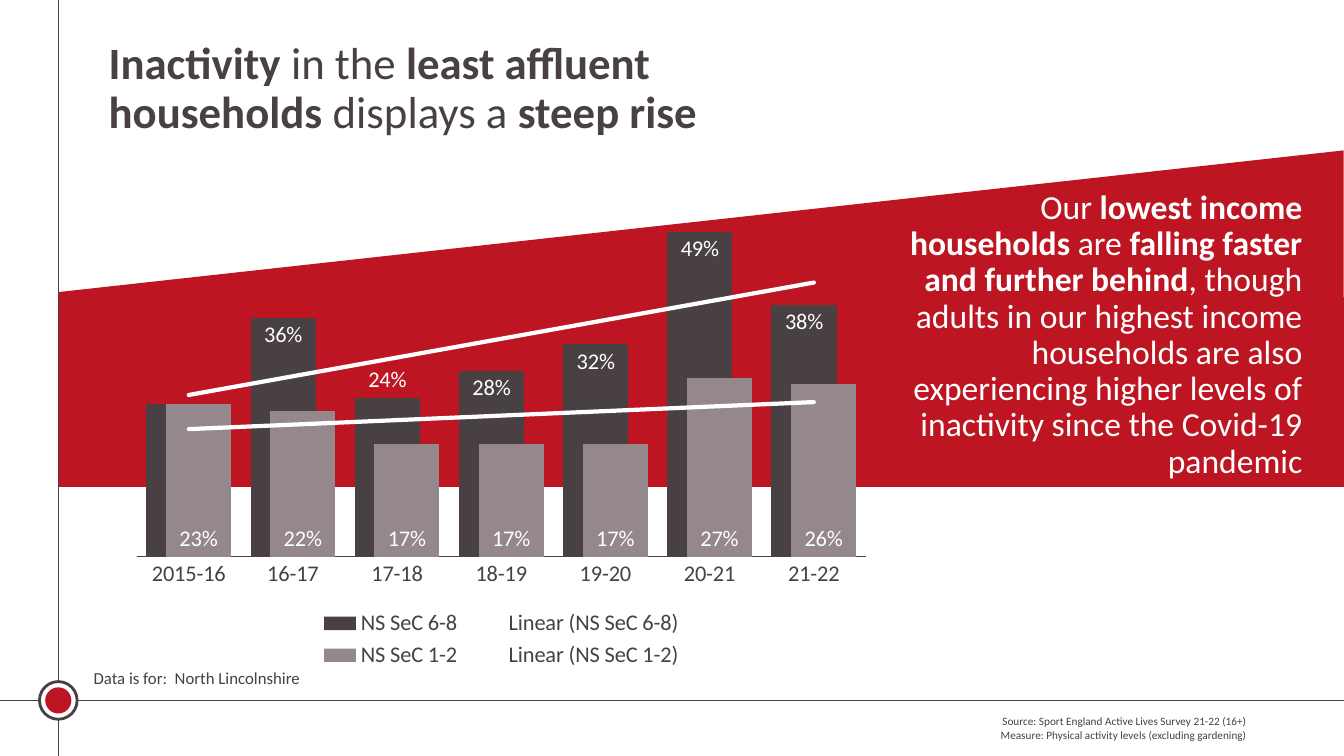
from dataclasses import dataclass

from lxml import etree
from pptx import Presentation
from pptx import util as u
from pptx.chart.data import CategoryChartData
from pptx.dml.color import RGBColor
from pptx.enum import chart as ch, shapes, text
from pptx.oxml.ns import qn


@dataclass(frozen=True)
class Theme:
    font: str = "Calibri"
    dark: str = "484043"
    red: str = "BD1622"
    grey: str = "95888D"
    white: str = "FFFFFF"
    title: int = 32
    message: int = 24
    chart: int = 16
    note: int = 12
    source: int = 8


@dataclass(frozen=True)
class Box:
    x: float
    y: float
    w: float
    h: float

    def cm(self) -> tuple:
        return tuple(u.Cm(v) for v in (self.x, self.y, self.w, self.h))


@dataclass(frozen=True)
class Group:
    name: str
    values: tuple
    color: str
    label_pos: ch.XL_LABEL_POSITION


T = Theme()
W, H = 33.87, 19.05
AXIS_X, AXIS_Y = 1.47, 17.65  # crossing of the two frame lines
YEARS = ("2015-16", "16-17", "17-18", "18-19", "19-20", "20-21", "21-22")
GROUPS = (
    Group("NS SeC 6-8", (0.23, 0.36, 0.24, 0.28, 0.32, 0.49, 0.38), T.dark,
          ch.XL_LABEL_POSITION.INSIDE_END),
    Group("NS SeC 1-2", (0.23, 0.22, 0.17, 0.17, 0.17, 0.27, 0.26), T.grey,
          ch.XL_LABEL_POSITION.INSIDE_BASE),
)


def rgb(color: str) -> RGBColor:
    return RGBColor.from_string(color)


def set_font(font, size: float, color: str) -> None:
    font.name, font.size = T.font, u.Pt(size)
    font.color.rgb = rgb(color)


def add_text(s, box: Box, content: str, *, size: float, color: str = T.dark,
             right: bool = False, spacing: float = 1.0) -> None:
    """Write one paragraph per line; parts between asterisks are bold."""
    tf = s.shapes.add_textbox(*box.cm()).text_frame
    tf.word_wrap = True
    for i, line in enumerate(content.split("\n")):
        p = tf.paragraphs[0] if i == 0 else tf.add_paragraph()
        p.alignment = text.PP_ALIGN.RIGHT if right else text.PP_ALIGN.LEFT
        p.line_spacing = spacing
        for j, part in enumerate(line.split("*")):
            if part:
                r = p.add_run()
                r.text = part
                set_font(r.font, size, color)
                r.font.bold = j % 2 == 1


def add_shape(s, kind, box: Box, fill: str, outline: float = 0):
    sp = s.shapes.add_shape(kind, *box.cm())
    sp.shadow.inherit = False
    sp.fill.solid()
    sp.fill.fore_color.rgb = rgb(fill)
    if outline:
        sp.line.color.rgb = rgb(T.dark)
        sp.line.width = u.Pt(outline)
    else:
        sp.line.fill.background()
    return sp


def add_line(s, x1: float, y1: float, x2: float, y2: float) -> None:
    ln = s.shapes.add_connector(shapes.MSO_CONNECTOR.STRAIGHT,
                                *(u.Cm(v) for v in (x1, y1, x2, y2)))
    ln.line.color.rgb = rgb(T.dark)
    ln.line.width = u.Pt(0.5)
    etree.SubElement(ln._element.spPr, qn("a:effectLst"))


def add_dot(s, diameter: float, fill: str, outline: float = 0) -> None:
    box = Box(AXIS_X - diameter / 2, AXIS_Y - diameter / 2, diameter, diameter)
    add_shape(s, shapes.MSO_SHAPE.OVAL, box, fill, outline)


def node(parent, tag: str, **attrs: str):
    return etree.SubElement(parent, qn(tag), **attrs)


def add_trend(series) -> None:
    trend = etree.Element(qn("c:trendline"))
    ln = node(node(trend, "c:spPr"), "a:ln", w=str(u.Pt(3)), cap="rnd")
    node(node(ln, "a:solidFill"), "a:srgbClr", val=T.white)
    node(trend, "c:trendlineType", val="linear")
    node(trend, "c:dispRSqr", val="0")
    node(trend, "c:dispEq", val="0")
    series._element.find(qn("c:cat")).addprevious(trend)


def style_series(series, group: Group) -> None:
    series.format.fill.solid()
    series.format.fill.fore_color.rgb = rgb(group.color)
    labels = series.data_labels
    labels.show_value = True
    labels.number_format, labels.number_format_is_linked = "0%", False
    labels.position = group.label_pos
    set_font(labels.font, T.chart, T.white)
    add_trend(series)


def set_plot_area(chart, **fractions: float) -> None:
    area = chart._chartSpace.chart.plotArea
    for old in area.findall(qn("c:layout")):
        area.remove(old)
    layout = etree.Element(qn("c:layout"))
    area.insert(0, layout)
    manual = node(layout, "c:manualLayout")
    node(manual, "c:layoutTarget", val="inner")
    node(manual, "c:xMode", val="edge")
    node(manual, "c:yMode", val="edge")
    for key, value in fractions.items():
        node(manual, f"c:{key}", val=str(value))


def add_inactivity_chart(s, box: Box) -> None:
    data = CategoryChartData(number_format="0%")
    data.categories = YEARS
    for group in GROUPS:
        data.add_series(group.name, group.values)
    chart = s.shapes.add_chart(ch.XL_CHART_TYPE.COLUMN_CLUSTERED, *box.cm(), data).chart
    chart.has_title = False
    set_font(chart.font, T.chart, T.dark)
    set_plot_area(chart, x=0.013, y=0.031, w=0.974, h=0.75)

    # Axes
    value, cat = chart.value_axis, chart.category_axis
    value.minimum_scale, value.maximum_scale = 0, 0.6
    value.has_major_gridlines = value.visible = False
    cat.major_tick_mark = ch.XL_TICK_MARK.NONE
    cat.format.line.color.rgb = rgb(T.dark)
    cat.format.line.width = u.Pt(0.75)
    set_font(cat.tick_labels.font, T.chart, T.dark)

    # Columns, labels and trend lines
    plot = chart.plots[0]
    plot.gap_width, plot.overlap, plot.vary_by_categories = 30, 70, False
    for series, group in zip(plot.series, GROUPS):
        style_series(series, group)

    # The first dark label is covered, the third stands above its column
    least = plot.series[0]
    raised = least.points[2].data_label
    set_font(raised.font, T.chart, T.white)
    raised.position = ch.XL_LABEL_POSITION.OUTSIDE_END
    covered = etree.Element(qn("c:dLbl"))
    node(covered, "c:idx", val="0")
    node(covered, "c:delete", val="1")
    least.data_labels._element.insert(0, covered)

    # Legend without the trend lines
    chart.has_legend = True
    legend = chart.legend
    legend.position = ch.XL_LEGEND_POSITION.BOTTOM
    legend.include_in_layout = False
    set_font(legend.font, T.chart, T.dark)
    for idx in (3, 2):
        entry = etree.Element(qn("c:legendEntry"))
        node(entry, "c:idx", val=str(idx))
        node(entry, "c:delete", val="1")
        legend._element.find(qn("c:legendPos")).addnext(entry)


def main() -> None:
    prs = Presentation()
    prs.slide_width, prs.slide_height = u.Cm(W), u.Cm(H)
    s = prs.slides.add_slide(prs.slide_layouts[6])

    # Red band with a rising upper edge
    add_shape(s, shapes.MSO_SHAPE.RECTANGLE, Box(AXIS_X, 7.49, W - AXIS_X, 4.78), T.red)
    wedge = add_shape(s, shapes.MSO_SHAPE.TRAPEZOID, Box(13.97, -8.71, 7.39, 32.39), T.red)
    wedge.adjustments[0] = 0.483
    wedge.rotation = 270

    # Frame lines and dot
    add_line(s, AXIS_X, 0, AXIS_X, H)
    add_line(s, 0, AXIS_Y, W, AXIS_Y)
    add_dot(s, 0.95, T.white, outline=2)
    add_dot(s, 0.66, T.red)

    # Notes at the foot
    add_text(s, Box(2.11, 16.71, 9.22, 0.76), "Data is for:  North Lincolnshire", size=T.note)
    add_text(s, Box(15.24, 17.88, 16.43, 0.94),
             "Source: Sport England Active Lives Survey 21-22 (16+)\n"
             "Measure: Physical activity levels (excluding gardening)",
             size=T.source, right=True)

    # Message and title
    add_text(s, Box(22.66, 4.67, 10.41, 7.65),
             "Our *lowest income households* are *falling faster and further behind*, "
             "though adults in our highest income households are also experiencing "
             "higher levels of inactivity since the Covid-19 pandemic",
             size=T.message, color=T.white, right=True, spacing=0.9)
    add_text(s, Box(2.49, 0.91, 18.01, 2.72),
             "*Inactivity* in the *least affluent households* displays a *steep rise*",
             size=T.title, spacing=0.9)

    add_inactivity_chart(s, Box(3.2, 3.58, 18.87, 13.39))
    prs.save("out.pptx")


if __name__ == "__main__":
    main()
